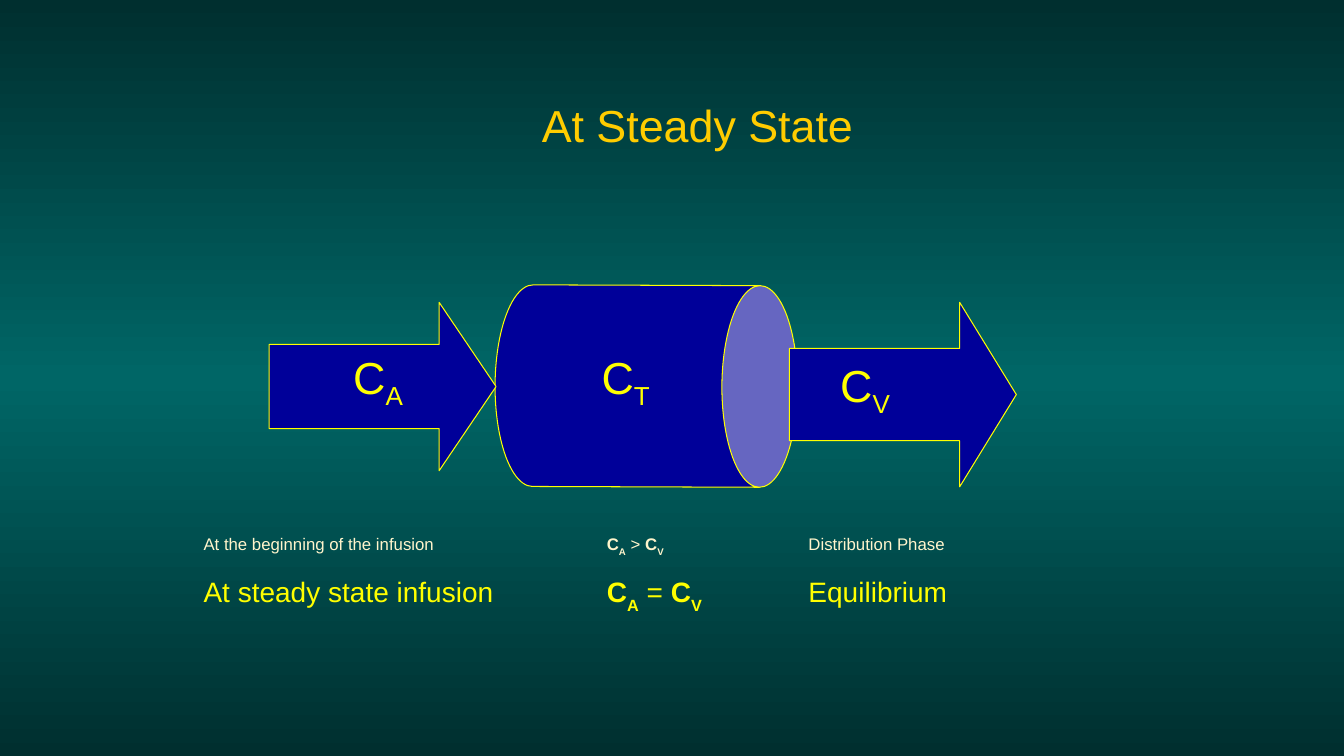
from copy import deepcopy

from lxml import etree
from pptx import Presentation
from pptx.dml.color import RGBColor
from pptx.enum.shapes import MSO_SHAPE
from pptx.enum.text import MSO_AUTO_SIZE, PP_ALIGN
from pptx.oxml.ns import qn
from pptx.util import Inches, Pt

CAN, ARROW = MSO_SHAPE.CAN, MSO_SHAPE.RIGHT_ARROW
CENTER, LEFT = PP_ALIGN.CENTER, PP_ALIGN.LEFT
YELLOW, GOLD, CREAM, NAVY = "FFFF00", "FFCC00", "FFF5CC", "000099"

BACKGROUND = [(0, "002F2F"), (0.5, "006666"), (1, "002F2F")]

# kind, (left, top, width, height), adjustments, rotation
FLOW = [
    (CAN, (5.41, 2.33, 2, 3), [0.375], 90.2),
    (ARROW, (2.67, 3, 2.25, 1.67), [0.5, 0.338], 0),
    (ARROW, (7.83, 3, 2.25, 1.83), [0.5, 0.307], 0),
]

# subscript of C, (left, top, width, height)
LABELS = [
    ("A", (3.25, 3.42, 1, 0.63)),
    ("V", (8.08, 3.5, 1, 0.63)),
    ("T", (5.37, 3.42, 1.67, 0.63)),
]

TITLE = ("At Steady State", (2.92, 0.92, 8, 0.64))

# moment, relation of CA to CV, phase, size, colour, space before
PHASES = [
    ("At the beginning of the infusion", ">", "Distribution Phase", 12, CREAM, 0),
    ("At steady state infusion", "=", "Equilibrium", 20, YELLOW, 12),
]
PHASES_AT = (1.92, 5.25, 9.42, 0.81)
TABS = (4, 6)


def rgb(value):
    return RGBColor.from_string(value)


def paint_background(page):
    fill = page.background.fill
    fill.gradient()
    fill.gradient_angle = 270
    stop_list = next(page.background._cSld.iter(qn("a:gsLst")))
    stop_list.insert(1, deepcopy(stop_list[0]))
    for stop, (position, color) in zip(fill.gradient_stops, BACKGROUND):
        stop.position = position
        stop.color.rgb = rgb(color)


def add_flow_shape(page, kind, place, adjustments, rotation):
    shape = page.shapes.add_shape(kind, *map(Inches, place))
    shape.shadow.inherit = False
    shape.rotation = rotation
    for index, value in enumerate(adjustments):
        shape.adjustments[index] = value
    shape.fill.solid()
    shape.fill.fore_color.rgb = rgb(NAVY)
    shape.line.color.rgb = rgb(YELLOW)
    shape.line.width = Pt(0.75)


def add_text_frame(page, place):
    frame = page.shapes.add_textbox(*map(Inches, place)).text_frame
    frame.word_wrap = True
    frame.auto_size = MSO_AUTO_SIZE.SHAPE_TO_FIT_TEXT
    return frame


def write(para, spans, size, color, align=LEFT):
    """Fill a paragraph with (text, bold, baseline in percent) spans."""
    para.alignment = align
    for text, bold, baseline in spans:
        span = para.add_run()
        span.text = text
        span.font.color.rgb = rgb(color)
        formats = {"name": "Arial", "size": Pt(size), "bold": bold}
        for name, value in formats.items():
            setattr(span.font, name, value)
        if baseline:
            span._r.get_or_add_rPr().set("baseline", str(baseline * 1000))


def set_tabs(para):
    tab_list = etree.SubElement(para._p.get_or_add_pPr(), qn("a:tabLst"))
    for position in TABS:
        etree.SubElement(tab_list, qn("a:tab"), pos=str(Inches(position)), algn="l")


def add_phases(page):
    frame = add_text_frame(page, PHASES_AT)
    for index, (moment, relation, phase, size, color, gap) in enumerate(PHASES):
        para = frame.add_paragraph() if index else frame.paragraphs[0]
        para.space_before = Pt(gap)
        set_tabs(para)
        spans = [
            (f"{moment}\t", False, 0),
            ("C", True, 0),
            ("A", True, -30),
            (f" {relation} ", False, 0),
            ("C", True, 0),
            ("V", True, -30),
            (f"\t{phase}", False, 0),
        ]
        write(para, spans, size, color)


def main():
    deck = Presentation()
    deck.slide_width, deck.slide_height = Inches(13.33), Inches(7.5)
    page = deck.slides.add_slide(deck.slide_layouts[6])
    paint_background(page)
    for item in FLOW:
        add_flow_shape(page, *item)
    for subscript, place in LABELS:
        spans = [("C", False, 0), (subscript, False, -25)]
        write(add_text_frame(page, place).paragraphs[0], spans, 32, YELLOW, CENTER)
    title, place = TITLE
    write(add_text_frame(page, place).paragraphs[0], [(title, False, 0)], 32, GOLD, CENTER)
    add_phases(page)
    deck.save("out.pptx")


if __name__ == "__main__":
    main()
